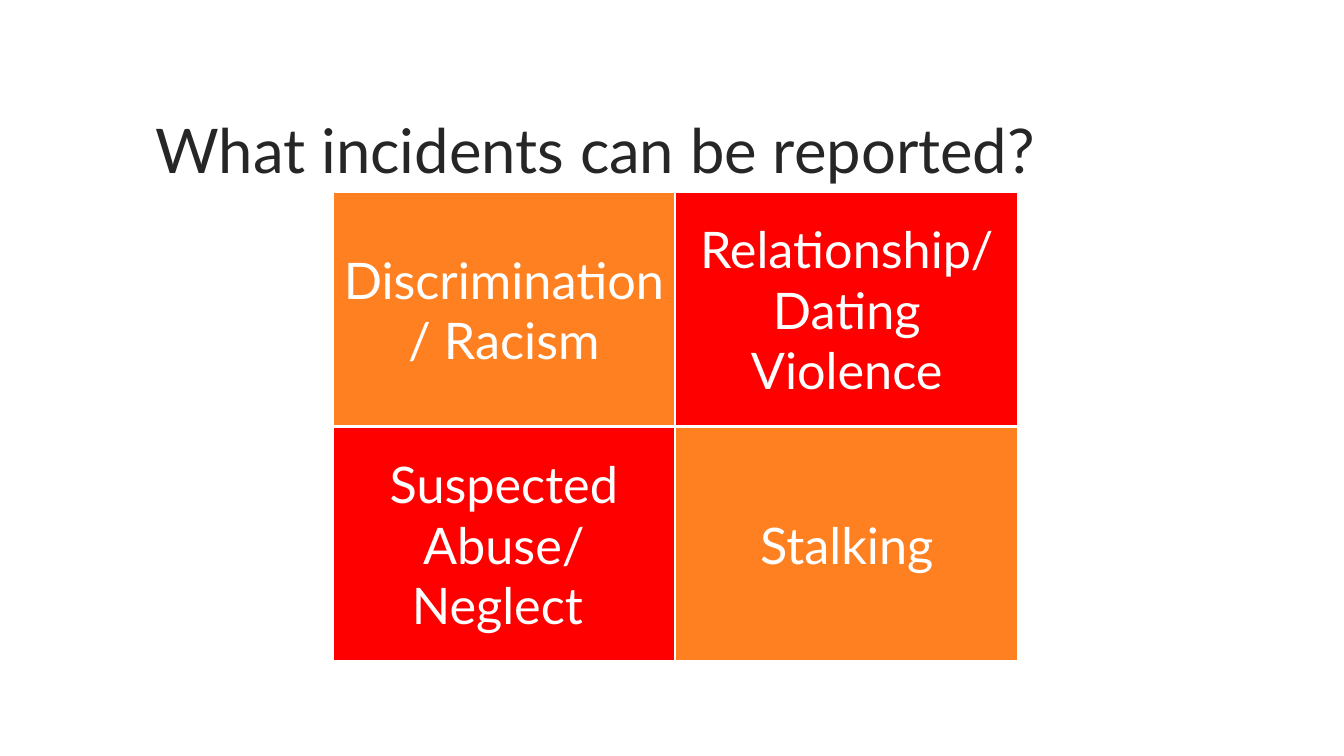
from pptx import Presentation
from pptx import util as u
from pptx.dml.color import RGBColor
from pptx.enum import shapes, text

ORANGE = RGBColor(0xFF, 0x80, 0x21)
RED = RGBColor(0xFF, 0x00, 0x00)
WHITE = RGBColor(0xFF, 0xFF, 0xFF)
DARK = RGBColor(0x26, 0x26, 0x26)

TILES = [
    ["Discrimination/ Racism", "Relationship/\nDating Violence"],
    ["Suspected Abuse/ Neglect ", "Stalking"],
]
LEFT, TOP, WIDE, HIGH = 8.38, 4.84, 8.64, 5.91


class Deck:
    face = "Lato"

    def __init__(self):
        self.prs = Presentation()
        self.prs.slide_width = u.Cm(33.87)
        self.prs.slide_height = u.Cm(19.05)
        self.slide = self.prs.slides.add_slide(self.prs.slide_layouts[5])

    def label(self, shape, words, size, color, align, gap):
        frame = shape.text_frame
        frame.text = words
        form = {
            "word_wrap": True,
            "auto_size": text.MSO_AUTO_SIZE.NONE,
            "vertical_anchor": text.MSO_ANCHOR.MIDDLE,
        }
        for key, value in form.items():
            setattr(frame, key, value)
        for para in frame.paragraphs:
            para.alignment = align
            para.line_spacing = gap
            for key, value in {"name": self.face, "size": u.Pt(size)}.items():
                setattr(para.font, key, value)
            para.font.color.rgb = color

    def title(self, words, left, top, wide, high):
        head = self.slide.shapes.title
        place = {"left": left, "top": top, "width": wide, "height": high}
        for key, value in place.items():
            setattr(head, key, u.Cm(value))
        self.label(head, words, 44, DARK, text.PP_ALIGN.LEFT, 0.9)

    def tile(self, words, fill, left, top, wide, high):
        box = self.slide.shapes.add_shape(
            shapes.MSO_SHAPE.RECTANGLE, *map(u.Cm, (left, top, wide, high)))
        box.shadow.inherit = False
        box.fill.solid()
        box.fill.fore_color.rgb = fill
        box.line.color.rgb = WHITE
        box.line.width = u.Pt(1.5)
        self.label(box, words, 36, WHITE, text.PP_ALIGN.CENTER, 1.0)


def main():
    deck = Deck()
    deck.title("What incidents can be reported?", 3.66, 2.03, 26.72, 3.68)
    for row, line in enumerate(TILES):
        for col, words in enumerate(line):
            fill = RED if (row + col) % 2 else ORANGE
            deck.tile(words, fill, LEFT + col * WIDE, TOP + row * HIGH, WIDE, HIGH)
    deck.prs.save("out.pptx")


if __name__ == "__main__":
    main()
